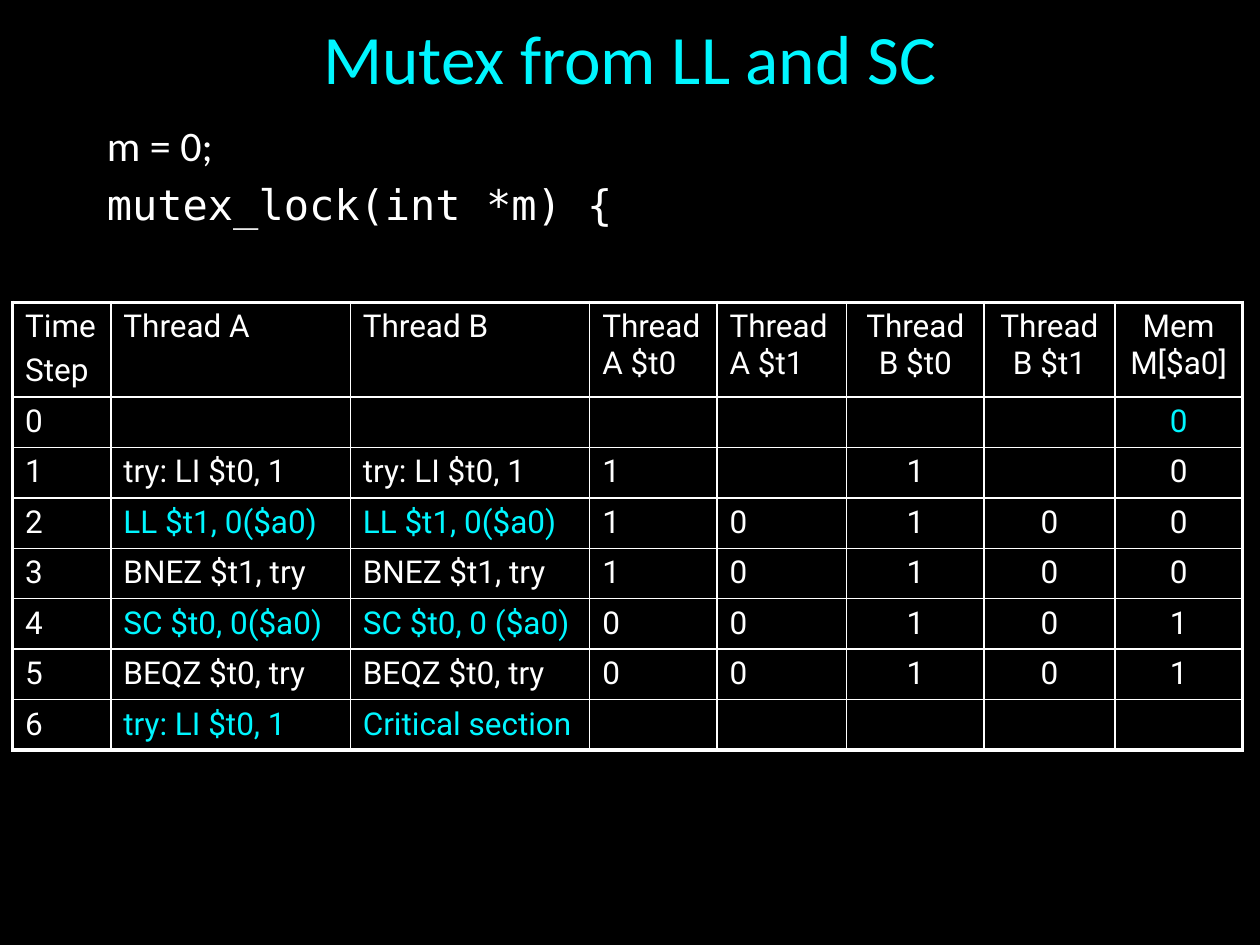
import pptx
import pptx.dml.color
import pptx.enum.text
import pptx.oxml
import pptx.oxml.ns
import pptx.util

BLACK = pptx.dml.color.RGBColor(0x00, 0x00, 0x00)
WHITE = pptx.dml.color.RGBColor(0xFF, 0xFF, 0xFF)
CYAN = pptx.dml.color.RGBColor(0x00, 0xF6, 0xFF)

LEFT = pptx.enum.text.PP_ALIGN.LEFT
CENTER = pptx.enum.text.PP_ALIGN.CENTER
TOP = pptx.enum.text.MSO_ANCHOR.TOP
MIDDLE = pptx.enum.text.MSO_ANCHOR.MIDDLE

SLIDE_WIDTH = pptx.util.Inches(10)
SLIDE_HEIGHT = pptx.util.Inches(7.5)

COLUMN_WIDTHS = [0.78, 1.9, 1.9, 1.01, 1.03, 1.09, 1.04, 1.01]
HEADER_HEIGHT = 0.45
STEP_HEIGHT = 0.37
FIRST_CENTERED_COLUMN = 5
THIN_LINE = 1
THICK_LINE = 2.25

TRACE = [
    ["Time\nStep", "Thread A", "Thread B", "Thread\vA $t0", "Thread\vA $t1",
     "Thread\vB $t0", "Thread\vB $t1", "Mem M[$a0]"],
    ["0", "", "", "", "", "", "", "0"],
    ["1", "try: LI $t0, 1", "try: LI $t0, 1", "1", "", "1", "", "0"],
    ["2", "LL $t1, 0($a0)", "LL $t1, 0($a0)", "1", "0", "1", "0", "0"],
    ["3", "BNEZ $t1, try", "BNEZ $t1, try", "1", "0", "1", "0", "0"],
    ["4", "SC $t0, 0($a0)", "SC $t0, 0 ($a0)", "0", "0", "1", "0", "1"],
    ["5", "BEQZ $t0, try", "BEQZ $t0, try", "0", "0", "1", "0", "1"],
    ["6", "try: LI $t0, 1", "Critical section", "", "", "", "", ""],
]
HIGHLIGHTS = {(1, 7)} | {(row, column) for row in (3, 5, 7) for column in (1, 2)}


def write_text(text_frame, text, fonts=("Roboto",), size=18, color=WHITE, align=LEFT):
    """Fill a frame with one paragraph per line, the last font serving any further lines."""
    for index, line in enumerate(text.split("\n")):
        paragraph = text_frame.add_paragraph() if index else text_frame.paragraphs[0]
        paragraph.text = line
        paragraph.alignment = align
        paragraph.space_before = pptx.util.Pt(0.2 * size if index else 0)
        for run in paragraph.runs:
            run.font.name = fonts[min(index, len(fonts) - 1)]
            run.font.size = pptx.util.Pt(size)
            run.font.color.rgb = color


def add_text_box(slide, text, left, top, width, height, anchor=TOP, **text_format):
    """Add a wrapped text box placed by shares of the slide's size."""
    shape = slide.shapes.add_textbox(
        int(left * SLIDE_WIDTH), int(top * SLIDE_HEIGHT),
        int(width * SLIDE_WIDTH), int(height * SLIDE_HEIGHT))
    shape.text_frame.word_wrap = True
    shape.text_frame.vertical_anchor = anchor
    write_text(shape.text_frame, text, **text_format)


def set_borders(cell, color, **widths):
    """Draw the cell's edges, given as L, R, T and B widths in points."""
    properties = cell._tc.get_or_add_tcPr()
    for side, width in widths.items():
        properties.append(pptx.oxml.parse_xml(
            f'<a:ln{side} {pptx.oxml.ns.nsdecls("a")} w="{pptx.util.Pt(width)}">'
            f'<a:solidFill><a:srgbClr val="{color}"/></a:solidFill></a:ln{side}>'))


def add_trace_table(slide, left, top, height):
    """Add the execution trace with thin inner lines and a thick frame."""
    last_row, last_column = len(TRACE) - 1, len(COLUMN_WIDTHS) - 1
    shape = slide.shapes.add_table(
        len(TRACE), len(COLUMN_WIDTHS), int(left * SLIDE_WIDTH), int(top * SLIDE_HEIGHT),
        pptx.util.Inches(sum(COLUMN_WIDTHS)), int(height * SLIDE_HEIGHT))
    table = shape.table
    table.first_row = table.horz_banding = False
    for column, width in zip(table.columns, COLUMN_WIDTHS):
        column.width = pptx.util.Inches(width)
    for index, row in enumerate(table.rows):
        row.height = pptx.util.Inches(STEP_HEIGHT if index else HEADER_HEIGHT)
    shape.height = int(height * SLIDE_HEIGHT)

    for row, texts in enumerate(TRACE):
        for column, text in enumerate(texts):
            cell = table.cell(row, column)
            write_text(
                cell.text_frame, text,
                color=CYAN if (row, column) in HIGHLIGHTS else WHITE,
                align=CENTER if column >= FIRST_CENTERED_COLUMN else LEFT)
            set_borders(
                cell, WHITE,
                L=THIN_LINE if column else THICK_LINE,
                R=THICK_LINE if column == last_column else THIN_LINE,
                T=THIN_LINE if row else THICK_LINE,
                B=THICK_LINE if row == last_row else THIN_LINE)
            cell.fill.background()


def main():
    """Build the slide and save it."""
    presentation = pptx.Presentation()
    presentation.slide_width = SLIDE_WIDTH
    presentation.slide_height = SLIDE_HEIGHT
    slide = presentation.slides.add_slide(presentation.slide_layouts[6])
    slide.background.fill.solid()
    slide.background.fill.fore_color.rgb = BLACK

    add_text_box(slide, "Mutex from LL and SC", 0.025, 0.02, 0.95, 0.08, anchor=MIDDLE,
                 fonts=("Calibri",), size=39.6, color=CYAN, align=CENTER)
    add_text_box(slide, "m = 0;\nmutex_lock(int *m) {", 0.075, 0.12, 0.95, 0.82,
                 fonts=("Calibri", "DejaVu Sans Mono"), size=24)
    add_trace_table(slide, 0.01, 0.32, 0.47)
    presentation.save("out.pptx")


if __name__ == "__main__":
    main()
